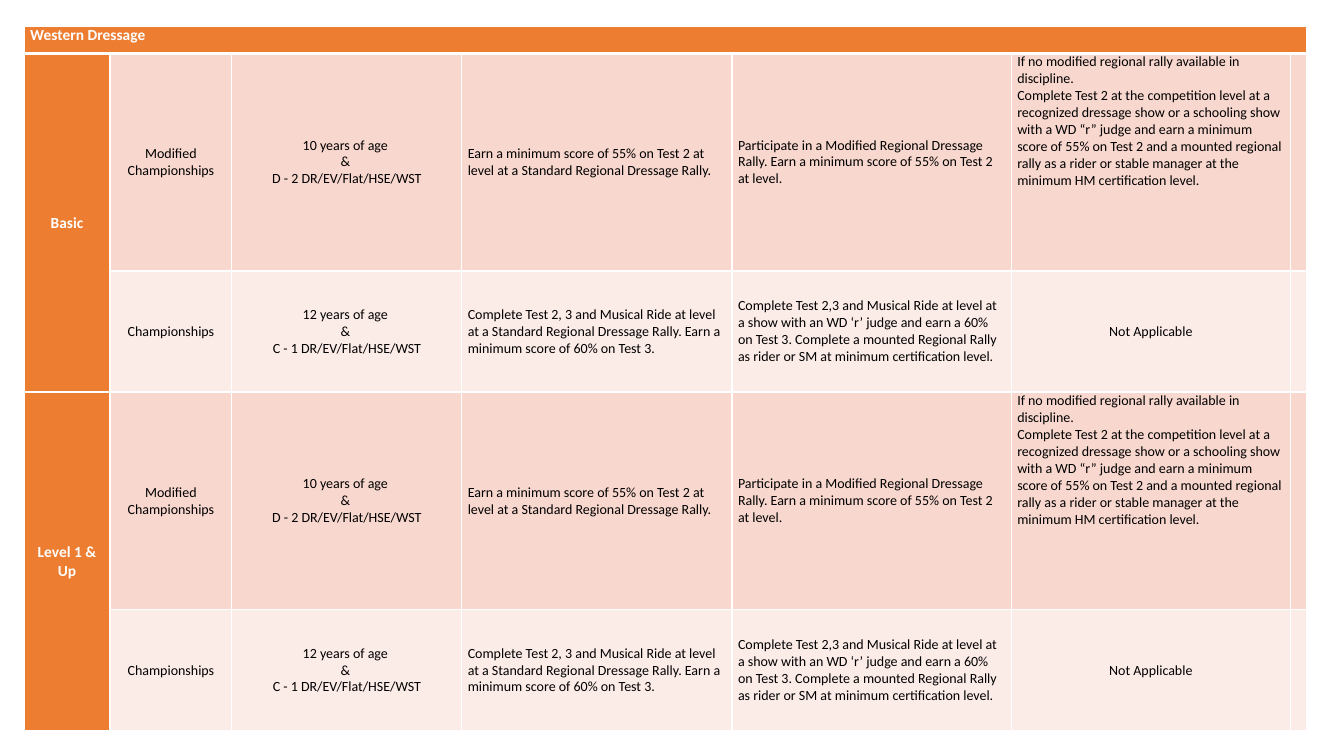
from lxml.etree import SubElement
from pptx import Presentation
from pptx.dml.color import RGBColor
from pptx.enum.text import MSO_ANCHOR, PP_ALIGN
from pptx.oxml.ns import qn
from pptx.util import Inches, Pt

COLORS = {
    "accent": "ED7D31",
    "modified": "F8D7CE",
    "championship": "FCECE8",
    "white": "FFFFFF",
    "black": "000000",
}
LABEL = {"name": "Calibri", "size": Pt(11), "bold": True}
BODY = {"name": "Calibri", "size": Pt(10), "bold": False}
CELL = {
    "margin_left": Inches(0.06),
    "margin_right": Inches(0.06),
    "margin_top": 0,
    "margin_bottom": 0,
}
COLS = [85, 121, 228, 268, 277, 277, 11]
ROWS = [27, 216, 120, 216, 120]
LEVELS = ["Basic", "Level 1 & Up"]
CENTER, LEFT = PP_ALIGN.CENTER, PP_ALIGN.LEFT
MIDDLE, TOP = MSO_ANCHOR.MIDDLE, MSO_ANCHOR.TOP

TIERS = [
    ("modified", [
        ("Modified Championships", CENTER, MIDDLE),
        ("10 years of age \n& \nD - 2 DR/EV/Flat/HSE/WST", CENTER, MIDDLE),
        ("Earn a minimum score of 55% on Test 2 at level at a Standard "
         "Regional Dressage Rally.", LEFT, MIDDLE),
        ("Participate in a Modified Regional Dressage Rally. Earn a minimum "
         "score of 55% on Test 2 at level.", LEFT, MIDDLE),
        ("If no modified regional rally available in discipline.\n"
         "Complete Test 2 at the competition level at a recognized dressage "
         "show or a schooling show with a WD “r” judge and earn a minimum "
         "score of 55% on Test 2 and a mounted regional rally as a rider or "
         "stable manager at the minimum HM certification level.", LEFT, TOP),
        ("", LEFT, TOP),
    ]),
    ("championship", [
        ("Championships", CENTER, MIDDLE),
        ("12 years of age \n& \nC - 1 DR/EV/Flat/HSE/WST", CENTER, MIDDLE),
        ("Complete Test 2, 3 and Musical Ride at level at a Standard Regional "
         "Dressage Rally. Earn a minimum score of 60% on Test 3.", LEFT, MIDDLE),
        ("Complete Test 2,3 and Musical Ride at level at a show with an WD ‘r’ "
         "judge and earn a 60% on Test 3. Complete a mounted Regional Rally as "
         "rider or SM at minimum certification level.", LEFT, MIDDLE),
        ("Not Applicable", CENTER, MIDDLE),
        ("", LEFT, TOP),
    ]),
]


class Deck:
    """Hold the style and current slide on a grid of 1333 columns by 750 rows."""

    def __init__(self):
        self.prs = Presentation()
        self.prs.slide_width, self.prs.slide_height = Inches(13.33), Inches(7.5)
        self.s = self.prs.slides.add_slide(self.prs.slide_layouts[6])

    def x(self, cols):
        return int(self.prs.slide_width * cols / 1333)

    def y(self, rows):
        return int(self.prs.slide_height * rows / 750)

    def table(self, left, top, cols, rows):
        frame = self.s.shapes.add_table(
            len(rows), len(cols), self.x(left), self.y(top),
            self.x(sum(cols)), self.y(sum(rows)))
        tbl = frame.table
        tbl.first_row = tbl.horz_banding = False
        for column, width in zip(tbl.columns, cols):
            column.width = self.x(width)
        for row, height in zip(tbl.rows, rows):
            row.height = self.y(height)
        return tbl

    def borders(self, cell, bottom):
        tcPr = cell._tc.get_or_add_tcPr()
        for side, width in {"L": 1, "R": 1, "T": 1, "B": bottom}.items():
            ln = SubElement(tcPr, qn(f"a:ln{side}"), w=str(Pt(width)))
            fill = SubElement(ln, qn("a:solidFill"))
            SubElement(fill, qn("a:srgbClr"), val=COLORS["white"])

    def cell(self, cell, fill, text="", align=LEFT, anchor=TOP,
             font=BODY, color="black", bottom=1):
        self.borders(cell, bottom)
        cell.fill.solid()
        cell.fill.fore_color.rgb = RGBColor.from_string(COLORS[fill])
        for key, value in {**CELL, "vertical_anchor": anchor}.items():
            setattr(cell, key, value)
        tf = cell.text_frame
        tf.text = text
        for p in tf.paragraphs:
            p.alignment = align
            for target in [p.font, *(r.font for r in p.runs)]:
                for key, value in font.items():
                    setattr(target, key, value)
                target.color.rgb = RGBColor.from_string(COLORS[color])

    def label(self, cell, text="", align=LEFT, anchor=TOP, bottom=1):
        self.cell(cell, "accent", text, align, anchor, LABEL, "white", bottom)


def main():
    deck = Deck()
    tbl = deck.table(24, 26, COLS, ROWS)
    for col in range(len(COLS)):
        deck.label(tbl.cell(0, col), "" if col else "Western Dressage", bottom=3)
    tbl.cell(0, 0).merge(tbl.cell(0, len(COLS) - 1))

    for i, level in enumerate(LEVELS):
        first = 1 + i * len(TIERS)
        for row, (fill, entries) in enumerate(TIERS, first):
            deck.label(tbl.cell(row, 0), level if row == first else "",
                       CENTER, MIDDLE)
            for col, entry in enumerate(entries, 1):
                deck.cell(tbl.cell(row, col), fill, *entry)
        tbl.cell(first, 0).merge(tbl.cell(first + len(TIERS) - 1, 0))

    deck.prs.save("out.pptx")


if __name__ == "__main__":
    main()
